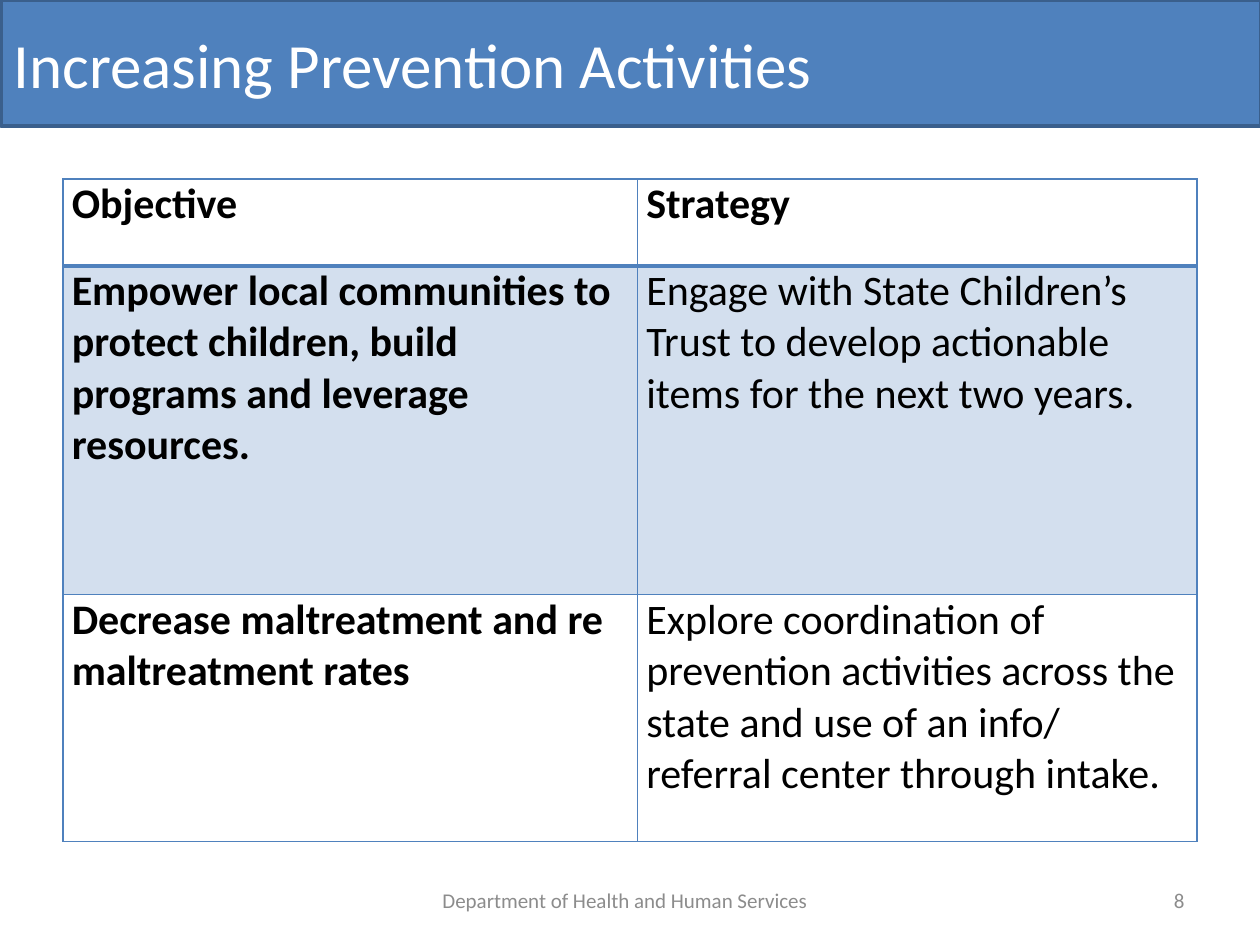
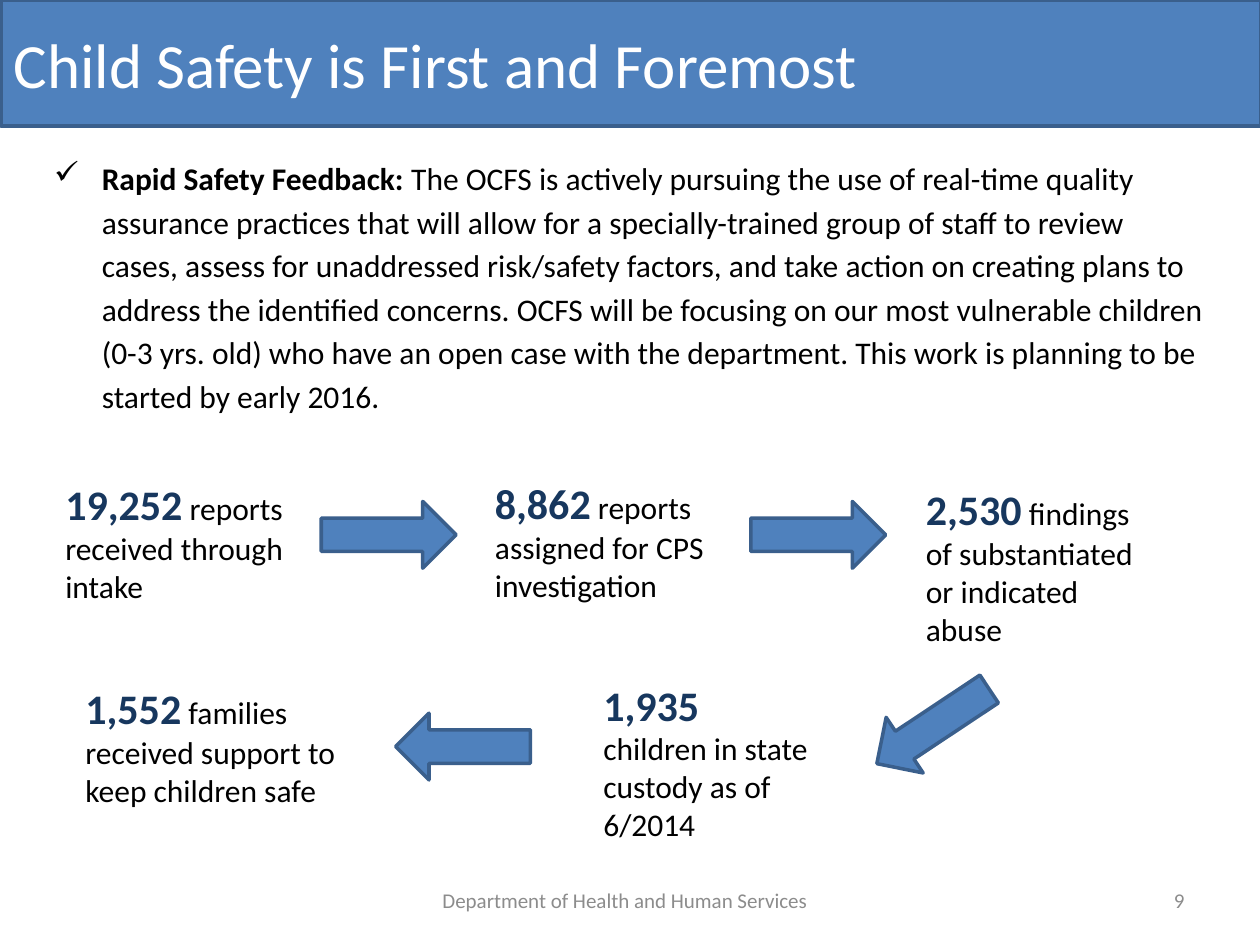
"""Build two slides on child safety: a prevention table and a case flow."""
from lxml import etree
from pptx import Presentation
from pptx import util as u
from pptx.dml.color import RGBColor
from pptx.enum import shapes, text
from pptx.oxml.ns import qn

COLORS = {"blue": "4F81BD", "edge": "3A5F8C", "band": "D3DFEE", "navy": "17375E",
          "grey": "8C8C8C", "black": "000000", "white": "FFFFFF"}
ALIGN = text.PP_ALIGN
SHAPE = shapes.MSO_SHAPE


def add_text(slide, box, runs, align=ALIGN.LEFT, anchor=text.MSO_ANCHOR.TOP):
    """Add a wrapping text box and return its paragraph."""
    frame = slide.shapes.add_textbox(*map(u.Inches, box)).text_frame
    frame.word_wrap = True
    frame.vertical_anchor = anchor
    write_runs(frame.paragraphs[0], runs, align)
    return frame.paragraphs[0]


def write_runs(paragraph, runs, align=ALIGN.LEFT):
    """Write (words, size, color, bold) runs into a paragraph."""
    paragraph.alignment = align
    for words, size, color, bold in runs:
        run = paragraph.add_run()
        run.text = words
        run.font.name = "Calibri"
        run.font.size = u.Pt(size)
        run.font.bold = bold
        run.font.color.rgb = RGBColor.from_string(COLORS[color])


presentation = Presentation()
presentation.slide_width = u.Inches(10)
presentation.slide_height = u.Inches(7.5)
slides = []
blocks = []

for number, title in [(8, "Increasing Prevention Activities"),
                      (9, "Child Safety is First and Foremost")]:
    slide = presentation.slides.add_slide(presentation.slide_layouts[6])
    slides.append(slide)
    add_text(slide, (6.92, 6.95, 2.58, 0.38), [(str(number), 12, "grey", False)],
             ALIGN.RIGHT, text.MSO_ANCHOR.MIDDLE)
    band = slide.shapes.add_shape(SHAPE.RECTANGLE, u.Inches(0.01), 0, u.Inches(10), u.Inches(1))
    band.text_frame.vertical_anchor = text.MSO_ANCHOR.MIDDLE
    write_runs(band.text_frame.paragraphs[0], [(title, 36, "white", False)])
    blocks.append(band)
    add_text(slide, (2.75, 6.95, 4.42, 0.38),
             [("Department of Health and Human Services", 12, "grey", False)],
             ALIGN.CENTER, text.MSO_ANCHOR.MIDDLE)

table_slide, flow_slide = slides

objectives = [
    ("Objective", "Strategy"),
    ("Empower local communities to protect children, build programs and leverage resources.",
     "Engage with State Children’s Trust to develop actionable items for the next two years."),
    ("Decrease maltreatment and re maltreatment rates",
     "Explore coordination of prevention activities across the state and use of an info/ "
     "referral center through intake."),
]
table = table_slide.shapes.add_table(3, 2, *map(u.Inches, (0.5, 1.42, 9, 5.26))).table
table.first_row = table.horz_banding = False
for column, width in zip(table.columns, (4.56, 4.44)):
    column.width = u.Inches(width)
for row, height in zip(table.rows, (0.69, 2.61, 1.96)):
    row.height = u.Inches(height)

for row_index, row_words in enumerate(objectives):
    for column_index, words in enumerate(row_words):
        cell = table.cell(row_index, column_index)
        cell.margin_left = cell.margin_right = u.Inches(0.07)
        cell.margin_top = cell.margin_bottom = 0
        bold = row_index == 0 or column_index == 0
        write_runs(cell.text_frame.paragraphs[0], [(words, 24, "black", bold)])
        if row_index == 1:
            cell.fill.solid()
            cell.fill.fore_color.rgb = RGBColor.from_string(COLORS["band"])
        else:
            cell.fill.background()
        properties = cell._tc.get_or_add_tcPr()
        for position, side in enumerate(("lnL", "lnR", "lnT", "lnB")):
            heavy = (row_index, side) in [(0, "lnB"), (1, "lnT")]
            border = etree.Element(qn(f"a:{side}"), w=str(u.Pt(2.25 if heavy else 1)))
            fill = etree.SubElement(border, qn("a:solidFill"))
            etree.SubElement(fill, qn("a:srgbClr"), val=COLORS["blue"])
            properties.insert(position, border)

feedback = add_text(flow_slide, (0.33, 1.17, 9.33, 2.17), [
    ("Rapid Safety Feedback:", 18, "black", True),
    (" The OCFS is actively pursuing the use of real-time quality assurance practices that will "
     "allow for a specially-trained group of staff to review cases, assess for unaddressed "
     "risk/safety factors, and take action on creating plans to address the identified concerns. "
     "OCFS will be focusing on our most vulnerable children (0-3 yrs. old) who have an open case "
     "with the department. This work is planning to be started by early 2016.",
     18, "black", False)])
feedback.line_spacing = 1.15
bullet_properties = feedback._p.get_or_add_pPr()
bullet_properties.set("marL", str(u.Inches(0.38)))
bullet_properties.set("indent", str(u.Inches(-0.38)))
etree.SubElement(bullet_properties, qn("a:buFont"), typeface="Wingdings")
etree.SubElement(bullet_properties, qn("a:buChar"), char="ü")

for box, count, words in [
    ((0.42, 3.75, 2, 1.11), "19,252", " reports received through intake"),
    ((3.83, 3.74, 2.33, 1.11), "8,862", " reports assigned for CPS investigation"),
    ((7.25, 3.79, 1.92, 1.41), "2,530", " findings of substantiated or indicated abuse"),
    ((4.69, 5.34, 1.83, 1.41), "1,935", " children in state custody as of 6/2014"),
    ((0.58, 5.37, 2.2, 1.11), "1,552", " families received support to keep children safe"),
]:
    add_text(flow_slide, box, [(count, 24, "navy", True), (words, 18, "black", False)])

for kind, box, rotation in [
    (SHAPE.RIGHT_ARROW, (2.55, 3.98, 1.07, 0.53), 0),
    (SHAPE.RIGHT_ARROW, (5.96, 3.98, 1.07, 0.53), 0),
    (SHAPE.DOWN_ARROW, (7.14, 5.23, 0.53, 1.07), 56.4),
    (SHAPE.RIGHT_ARROW, (3.14, 5.66, 1.07, 0.53), 180),
]:
    arrow = flow_slide.shapes.add_shape(kind, *map(u.Inches, box))
    arrow.rotation = rotation
    blocks.append(arrow)

for shape in blocks:
    shape.shadow.inherit = False
    shape.fill.solid()
    shape.fill.fore_color.rgb = RGBColor.from_string(COLORS["blue"])
    shape.line.color.rgb = RGBColor.from_string(COLORS["edge"])
    shape.line.width = u.Pt(2)

presentation.save("out.pptx")
